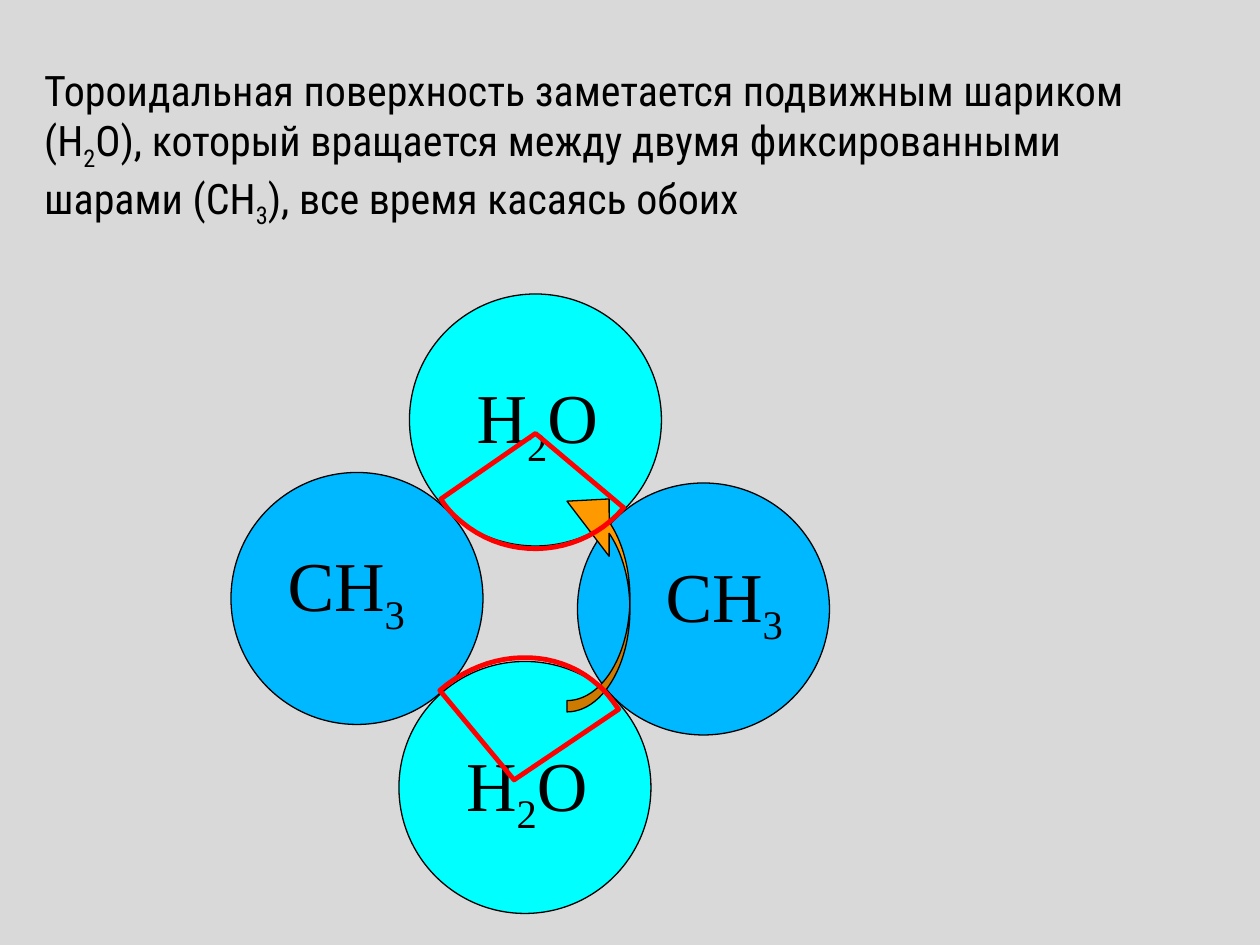
from pptx import Presentation, util as u
from pptx.dml.color import RGBColor
from pptx.enum import shapes as sh, text as tx

hue = RGBColor.from_string
deck = Presentation()
deck.slide_width, deck.slide_height = u.Inches(10), u.Inches(7.5)
W, H = deck.slide_width, deck.slide_height
COL, ROW = W // 120, H // 90  # a grid of 120 columns by 90 rows

slide = deck.slides.add_slide(deck.slide_layouts[5])
slide.background.fill.solid()
slide.background.fill.fore_color.rgb = hue("D9D9D9")


def write(box, text, font, size, wrap=True, anchor=tx.MSO_ANCHOR.TOP):
    """Fill a box with text; parts between underscores become subscripts."""
    frame = box.text_frame
    frame.auto_size = tx.MSO_AUTO_SIZE.NONE
    frame.word_wrap, frame.vertical_anchor = wrap, anchor
    para = frame.paragraphs[0]
    para.alignment = tx.PP_ALIGN.LEFT
    for i, part in enumerate(text.split("_")):
        if not part:
            continue
        run = para.add_run()
        run.text = part
        run.font.name, run.font.size = font, u.Pt(size)
        run.font.color.rgb = hue("000000")
        if i % 2:
            run.font._element.set("baseline", "-25000")


def style(shape, fill, line="000000", width=0.75):
    shape.shadow.inherit = False
    if fill:
        shape.fill.solid()
        shape.fill.fore_color.rgb = hue(fill)
    else:
        shape.fill.background()
    shape.line.color.rgb = hue(line)
    shape.line.width = u.Pt(width)


title = slide.shapes.title
title.left, title.top, title.width, title.height = 3 * COL, 2 * ROW, 111 * COL, 24 * ROW
write(title, "Тороидальная поверхность заметается подвижным шариком (H_2_O), "
      "который вращается между двумя фиксированными шарами (CH_3_), "
      "все время касаясь обоих",
      "Roboto Condensed", 24, anchor=tx.MSO_ANCHOR.MIDDLE)

# Balls: column, row, fill, label, label column, label row
balls = [
    (22, 45, "00B8FF", "CH_3_", 26.2, 51),
    (55, 46, "00B8FF", "CH_3_", 62.2, 52),
    (38, 63, "00FFFF", "H_2_O", 43.2, 70),
    (39, 28, "00FFFF", "H_2_O", 44.2, 35),
]
for col, row, fill, *rest in balls:
    ball = slide.shapes.add_shape(sh.MSO_SHAPE.OVAL, col * COL, row * ROW,
                                  24 * COL, 24 * ROW)
    style(ball, fill)

arrow = slide.shapes.add_shape(sh.MSO_SHAPE.CURVED_LEFT_ARROW, 54 * COL, 45 * ROW,
                               6 * COL, int(22.8 * ROW))
style(arrow, "FF9900")
for i, share in enumerate((0.18, 0.91, 0.67)):
    arrow.adjustments[i] = share
arrow.rotation = 180
arrow._element.spPr.xfrm.set("flipH", "1")

for *rest, label, col, row in balls:
    box = slide.shapes.add_textbox(int(col * COL), int(row * ROW),
                                   int(13.8 * COL), int(10.3 * ROW))
    write(box, label, "Times New Roman", 40, wrap=False)

# Sectors swept by the moving ball: tip, then chained Bezier points in inches
sectors = [
    ((4.25, 3.44), [(4.95, 4.03), (4.63, 4.41), (4.05, 4.47), (3.66, 4.14),
                    (3.6, 4.09), (3.54, 4.03), (3.5, 3.96)]),
    ((4.08, 6.19), [(3.49, 5.48), (3.87, 5.15), (4.41, 5.13), (4.75, 5.44),
                    (4.81, 5.49), (4.86, 5.56), (4.91, 5.63)]),
]
STEPS = 20
for tip, knots in sectors:
    arc = []
    for k in range(0, len(knots) - 1, 3):
        for n in range(STEPS + 1):
            t = n / STEPS
            mix = ((1 - t) ** 3, 3 * t * (1 - t) ** 2, 3 * t * t * (1 - t), t ** 3)
            arc.append([u.Inches(sum(m * p[a] for m, p in zip(mix, knots[k:k + 4])))
                        for a in (0, 1)])
    pen = slide.shapes.build_freeform(*map(u.Inches, tip))
    pen.add_line_segments(arc, close=True)
    style(pen.convert_to_shape(), None, "FF0000", 2.75)

deck.save("out.pptx")
